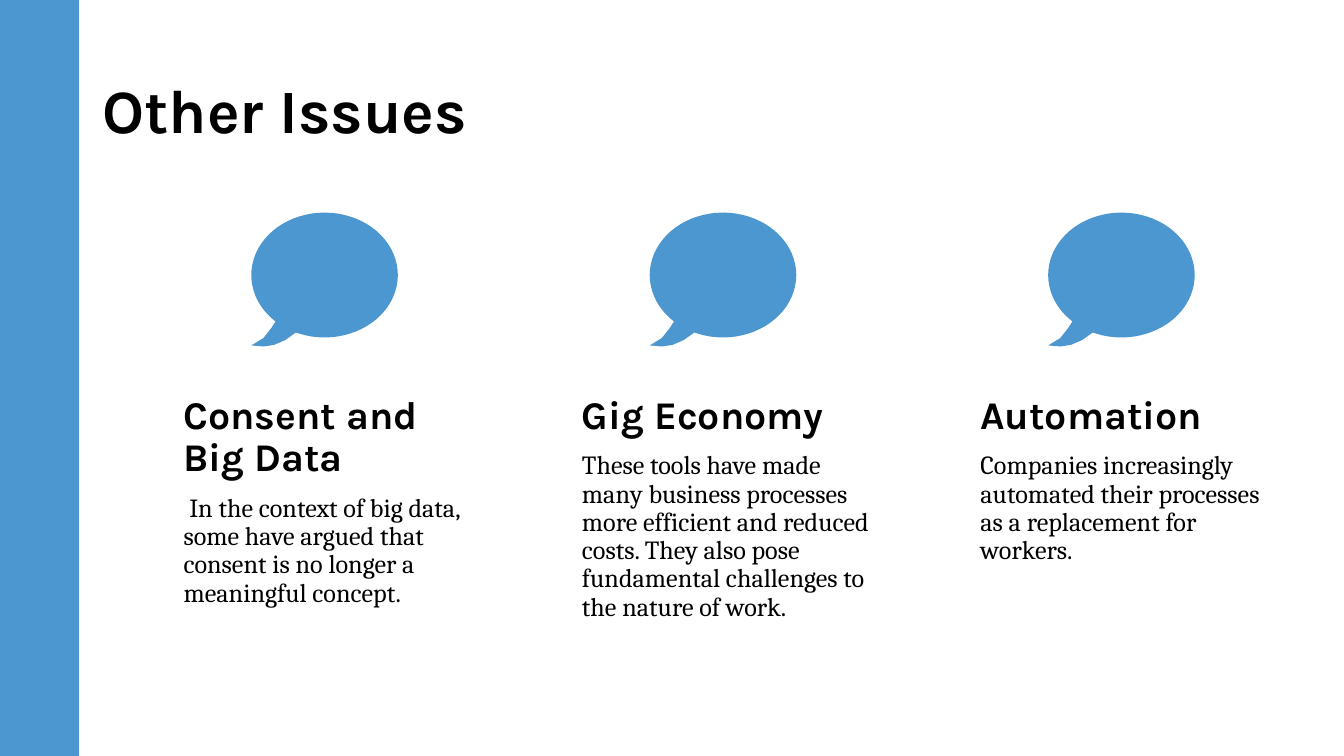
"""Build the "Other Issues" slide with three speech-bubble columns."""
import math

import pptx
import pptx.dml.color
import pptx.enum.shapes
import pptx.enum.text
import pptx.util

Cm = pptx.util.Cm
Pt = pptx.util.Pt
BLUE = "4C97D0"
BLACK = "000000"


def color(hex_string):
    return pptx.dml.color.RGBColor.from_string(hex_string)


def format_text(paragraph, font_name, size, bold):
    paragraph.alignment = pptx.enum.text.PP_ALIGN.LEFT
    paragraph.line_spacing = 0.9
    paragraph.font.name = font_name
    paragraph.font.size = Pt(size)
    paragraph.font.bold = bold
    paragraph.font.color.rgb = color(BLACK)


presentation = pptx.Presentation()
presentation.slide_width = Cm(25.4)
presentation.slide_height = Cm(14.29)
slide = presentation.slides.add_slide(presentation.slide_layouts[5])

title = slide.shapes.title
title.left, title.top, title.width, title.height = Cm(1.75), Cm(0.76), Cm(21.9), Cm(2.77)
title.text_frame.text = "Other Issues"
title.text_frame.vertical_anchor = pptx.enum.text.MSO_ANCHOR.MIDDLE
title.text_frame.margin_left = title.text_frame.margin_right = Cm(0.19)
title.text_frame.margin_top = title.text_frame.margin_bottom = Cm(0.1)
format_text(title.text_frame.paragraphs[0], "Karla", 33, True)

side_bar = slide.shapes.add_shape(
    pptx.enum.shapes.MSO_SHAPE.RECTANGLE, 0, 0, Cm(1.47), presentation.slide_height)
side_bar.shadow.inherit = False
side_bar.fill.solid()
side_bar.fill.fore_color.rgb = color(BLUE)
side_bar.line.color.rgb = color(BLUE)
side_bar.line.width = Pt(1)

radius_x, radius_y = 1.385, 1.18
bubble_outline = [
    (radius_x * (1 + math.cos(math.radians(angle))),
     radius_y * (1 + math.sin(math.radians(angle))))
    for angle in [113, *range(110, -228, -5), -228]
]
bubble_outline += [(0.38, 2.18), (0.23, 2.37), (0, 2.51), (0.23, 2.53), (0.43, 2.5), (0.64, 2.41)]

issues = [
    ("Consent and Big Data",
     " In the context of big data, some have argued that consent is no longer "
     "a meaningful concept."),
    ("Gig Economy",
     "These tools have made many business processes more efficient and reduced costs. "
     "They also pose fundamental challenges to the nature of work."),
    ("Automation",
     "Companies increasingly automated their processes as a replacement for workers."),
]
column_pitch = 7.53

for column, (heading, description) in enumerate(issues):
    offset = column * column_pitch

    points = [(Cm(4.75 + offset + x), Cm(4.02 + y)) for x, y in bubble_outline]
    builder = slide.shapes.build_freeform(*points[0])
    builder.add_line_segments(points[1:], close=True)
    bubble = builder.convert_to_shape()
    bubble.shadow.inherit = False
    bubble.fill.solid()
    bubble.fill.fore_color.rgb = color(BLUE)
    bubble.line.fill.background()

    text_box = slide.shapes.add_textbox(Cm(2.9 + offset), Cm(7.37), Cm(6.5), Cm(3.33))
    text_frame = text_box.text_frame
    text_frame.word_wrap = True
    text_frame.margin_left = Cm(0.57)
    text_frame.margin_right = Cm(0.19)
    text_frame.margin_top = text_frame.margin_bottom = Cm(0.1)

    heading_paragraph = text_frame.paragraphs[0]
    heading_paragraph.text = heading
    format_text(heading_paragraph, "Karla", 21, True)

    description_paragraph = text_frame.add_paragraph()
    description_paragraph.text = description
    description_paragraph.space_before = Pt(8)
    format_text(description_paragraph, "Cambria", 14, False)

presentation.save("out.pptx")
